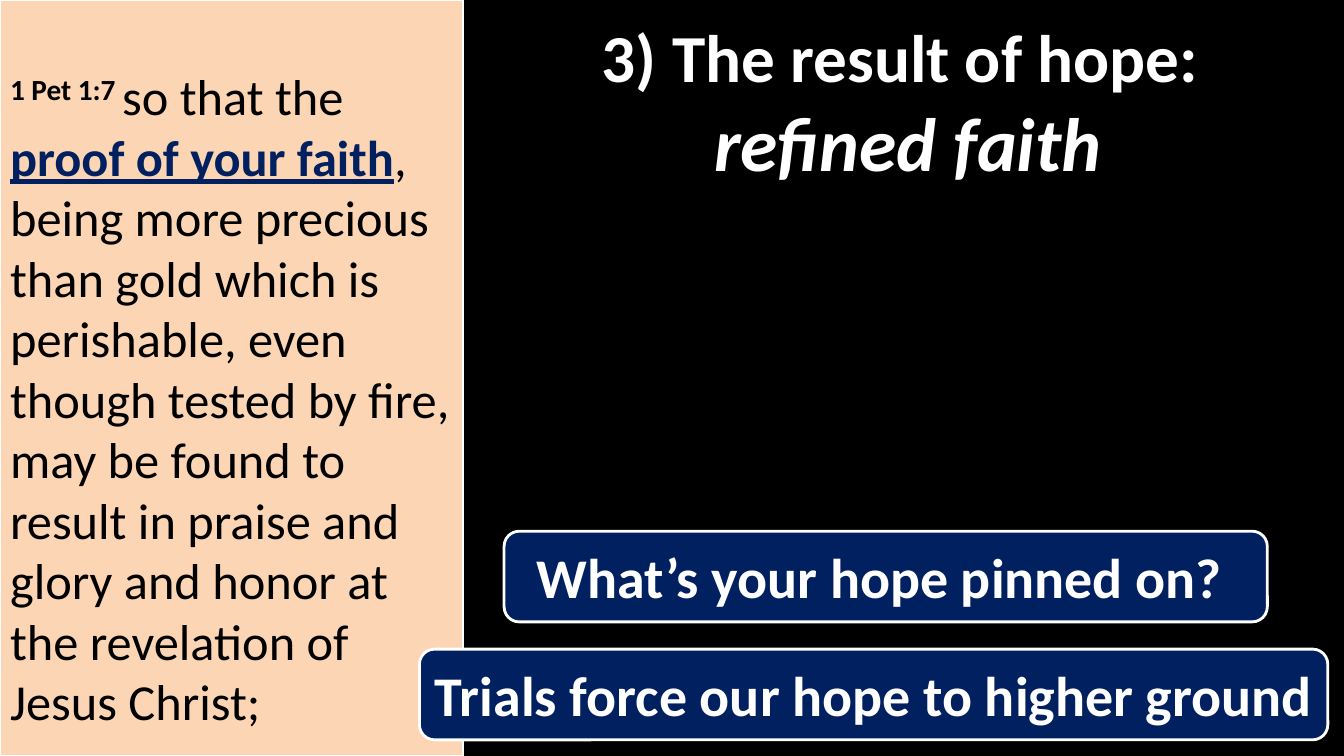
from lxml.etree import SubElement
from pptx import Presentation
from pptx.dml.color import RGBColor
from pptx.enum.shapes import MSO_SHAPE
from pptx.enum.text import MSO_ANCHOR, MSO_AUTO_SIZE, PP_ALIGN
from pptx.oxml.ns import qn
from pptx.util import Inches, Pt

BLACK = RGBColor(0x00, 0x00, 0x00)
WHITE = RGBColor(0xFF, 0xFF, 0xFF)
NAVY = RGBColor(0x00, 0x20, 0x60)
PEACH = RGBColor(0xFC, 0xD5, 0xB5)

# Content: (text, font formats)
HEADING = [
    ("3) The result of hope: ", {"size": Pt(48)}),
    ("refined faith", {"size": Pt(54), "italic": True}),
]
VERSE = [
    ("1 Pet 1:7 ", {"bold": True}),
    ("so that the ", {}),
    ("proof of your faith", {"bold": True, "underline": True}),
    (", being more precious than gold which is perishable, even though tested "
     "by fire, may be found to result in praise and glory and honor "
     "at the revelation of Jesus Christ;", {}),
]
# Buttons: (text, left, width)
BUTTONS = [
    ("What’s your hope pinned on? ", 5, 7.57),
    ("Trials force our hope to higher ground", 4.16, 9.01),
]

# Layout in inches
WIDTH, HEIGHT = 13.33, 7.5
PANEL_W = 4.59
BUTTON_TOP, BUTTON_H, BUTTON_STEP = 5.27, 0.9, 1.17


def place(sp, left, top, width, height):
    sp.left, sp.top, sp.width, sp.height = map(Inches, (left, top, width, height))


def paint(sp, fill, line_width):
    sp.fill.solid()
    sp.fill.fore_color.rgb = fill
    sp.line.color.rgb = WHITE
    sp.line.width = Pt(line_width)


def setup(tf, **formats):
    for name, value in formats.items():
        setattr(tf, name, value)


def add_run(p, text, color, **formats):
    r = p.add_run()
    r.text = text
    r.font.color.rgb = color
    for name, value in {"name": "Calibri", **formats}.items():
        setattr(r.font, name, value)
    return r


def main():
    prs = Presentation()
    prs.slide_width, prs.slide_height = Inches(WIDTH), Inches(HEIGHT)
    s = prs.slides.add_slide(prs.slide_layouts[1])
    s.background.fill.solid()
    s.background.fill.fore_color.rgb = BLACK
    title, body = s.placeholders

    # Heading
    place(title, 4.92, 0.17, 8.17, 1.67)
    tf = title.text_frame
    setup(tf, auto_size=MSO_AUTO_SIZE.NONE, vertical_anchor=MSO_ANCHOR.MIDDLE)
    for i, (text, formats) in enumerate(HEADING):
        p = tf.add_paragraph() if i else tf.paragraphs[0]
        p.alignment = PP_ALIGN.CENTER
        add_run(p, text, WHITE, bold=True, **formats)

    # Verse panel
    place(body, 0, 0, PANEL_W, HEIGHT)
    paint(body, PEACH, 1.5)
    tf = body.text_frame
    setup(tf, auto_size=MSO_AUTO_SIZE.NONE, vertical_anchor=MSO_ANCHOR.TOP,
          margin_top=Inches(0.65))
    p = tf.paragraphs[0]
    p.space_before = Pt(0)
    pPr = p._p.get_or_add_pPr()
    pPr.set("marL", "0")
    pPr.set("indent", "0")
    SubElement(pPr, qn("a:buNone"))
    for text, formats in VERSE:
        color = NAVY if "underline" in formats else BLACK
        add_run(p, text, color, size=Pt(36), **formats)
    p.runs[0].font._element.set("baseline", "30000")

    # Buttons
    for i, (text, left, width) in enumerate(BUTTONS):
        sp = s.shapes.add_shape(MSO_SHAPE.ROUNDED_RECTANGLE, 0, 0, 0, 0)
        place(sp, left, BUTTON_TOP + i * BUTTON_STEP, width, BUTTON_H)
        paint(sp, NAVY, 2)
        sp.shadow.inherit = False
        setup(sp.text_frame, word_wrap=False, vertical_anchor=MSO_ANCHOR.MIDDLE)
        p = sp.text_frame.paragraphs[0]
        p.alignment = PP_ALIGN.CENTER
        add_run(p, text, WHITE, size=Pt(40), bold=True)

    prs.save("out.pptx")


if __name__ == "__main__":
    main()
